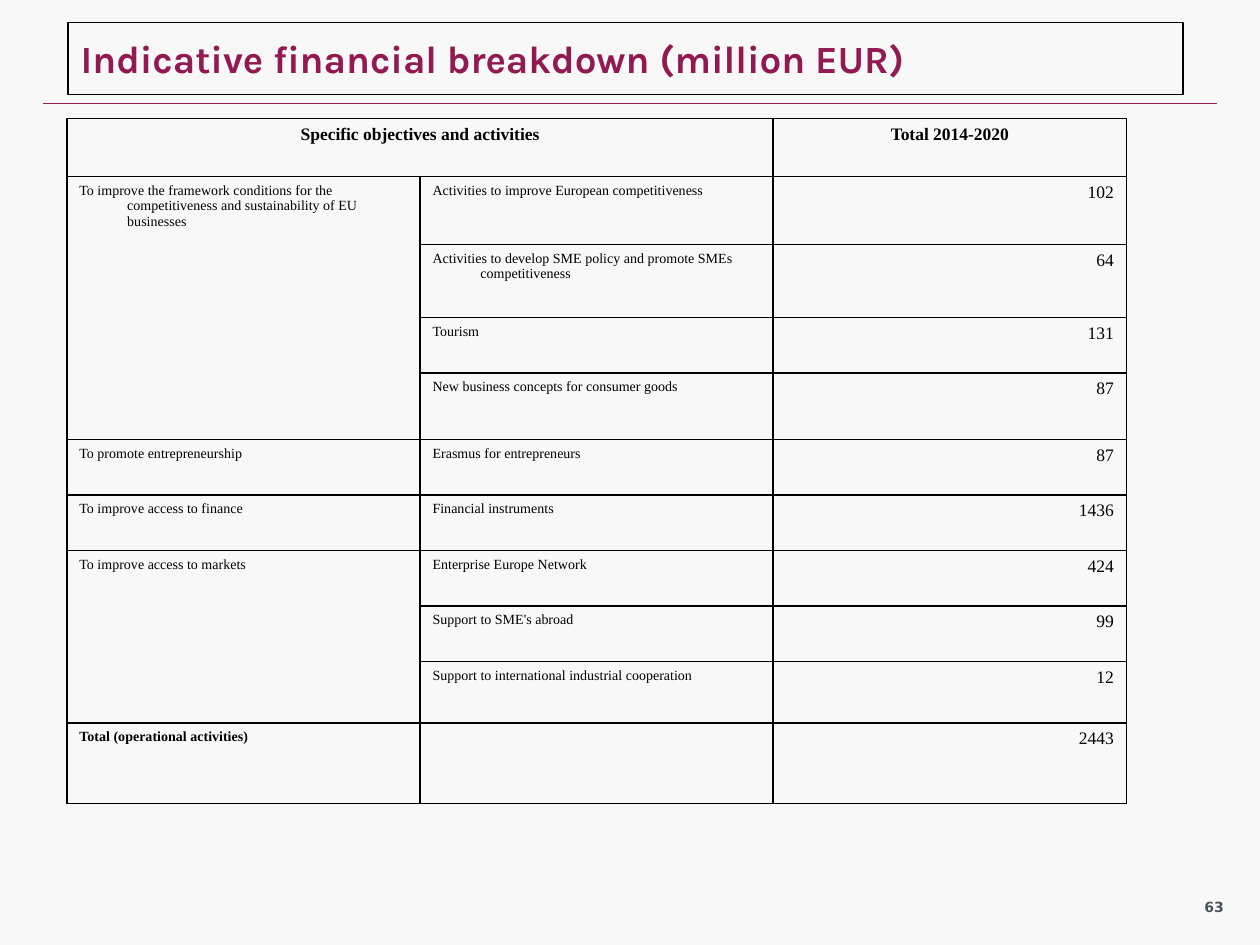
from lxml.etree import SubElement
from pptx import Presentation
from pptx.dml.color import RGBColor
from pptx.enum.shapes import MSO_CONNECTOR
from pptx.enum.text import MSO_ANCHOR, PP_ALIGN
from pptx.oxml.ns import qn
from pptx.util import Inches, Pt

WIDTH, HEIGHT = 10, 7.5
BLACK, PLUM, SLATE, PAPER = "000000", "921A50", "49545A", "F8F8F8"
HANGING = 0.38
ROW_HEIGHTS = [0.46, 0.54, 0.58, 0.44, 0.53, 0.44, 0.44, 0.44, 0.44, 0.49, 0.64]
OBJECTIVES = [
    ("To improve the framework conditions for the competitiveness and sustainability of EU businesses", [
        ("Activities to improve European competitiveness", 102),
        ("Activities to develop SME policy and promote SMEs competitiveness", 64),
        ("Tourism", 131),
        ("New business concepts for consumer goods", 87),
    ]),
    ("To promote entrepreneurship", [("Erasmus for entrepreneurs", 87)]),
    ("To improve access to finance", [("Financial instruments", 1436)]),
    ("To improve access to markets", [
        ("Enterprise Europe Network", 424),
        ("Support to SME's abroad", 99),
        ("Support to international industrial cooperation", 12),
    ]),
]


def color(value):
    return RGBColor.from_string(value)


def write(frame, text, size=8, font="Times New Roman", fill=BLACK, bold=False,
          align=PP_ALIGN.LEFT, hanging=0):
    para = frame.paragraphs[0]
    para.alignment = align
    if hanging:
        properties = para._p.get_or_add_pPr()
        properties.set("marL", str(Inches(hanging)))
        properties.set("indent", str(-Inches(hanging)))
    span = para.add_run()
    span.text = text
    span.font.size = Pt(size)
    span.font.name = font
    span.font.bold = bold
    span.font.color.rgb = color(fill)


def add_borders(cell, width=1):
    properties = cell._tc.get_or_add_tcPr()
    for side in ("a:lnL", "a:lnR", "a:lnT", "a:lnB"):
        line = SubElement(properties, qn(side), w=str(Pt(width)))
        solid = SubElement(line, qn("a:solidFill"))
        SubElement(solid, qn("a:srgbClr"), val=BLACK)


def add_title(page, left, top, width, height):
    title = page.shapes.title
    title.left, title.top, title.width, title.height = map(Inches, (left, top, width, height))
    title.line.color.rgb = color(BLACK)
    title.line.width = Pt(0.75)
    title.text_frame.word_wrap = True
    title.text_frame.vertical_anchor = MSO_ANCHOR.MIDDLE
    write(title.text_frame, "Indicative financial breakdown (million EUR)",
          size=22, font="Karla", fill=PLUM, bold=True)


def add_rule(page, left, top, width):
    rule = page.shapes.add_connector(MSO_CONNECTOR.STRAIGHT, Inches(left), Inches(top),
                                     Inches(left + width), Inches(top))
    rule.line.color.rgb = color(PLUM)
    rule.line.width = Pt(0.5)
    SubElement(rule._element.spPr, qn("a:effectLst"))


def add_breakdown(page, left, top, width):
    table = page.shapes.add_table(len(ROW_HEIGHTS), 3, Inches(left), Inches(top),
                                  Inches(width), Inches(sum(ROW_HEIGHTS))).table
    for column in table.columns:
        column.width = Inches(width / 3)
    for row, height in zip(table.rows, ROW_HEIGHTS):
        row.height = Inches(height)
    for cell in table.iter_cells():
        add_borders(cell)
        cell.fill.background()

    def put(row, column, text, **style):
        write(table.cell(row, column).text_frame, text, hanging=HANGING, **style)

    heading = {"size": 10, "bold": True, "align": PP_ALIGN.CENTER}
    amount = {"size": 10, "align": PP_ALIGN.RIGHT}
    table.cell(0, 0).merge(table.cell(0, 1))
    put(0, 0, "Specific objectives and activities", **heading)
    put(0, 2, "Total 2014-2020", **heading)
    row = 1
    for objective, activities in OBJECTIVES:
        if len(activities) > 1:
            table.cell(row, 0).merge(table.cell(row + len(activities) - 1, 0))
        put(row, 0, objective)
        for activity, total in activities:
            put(row, 1, activity)
            put(row, 2, str(total), **amount)
            row += 1
    put(row, 0, "Total (operational activities)", bold=True)
    put(row, 2, str(sum(total for _, group in OBJECTIVES for _, total in group) + 1), **amount)


def add_page_number(page, left, top, width, height):
    box = page.shapes.add_textbox(*map(Inches, (left, top, width, height)))
    box.text_frame.word_wrap = True
    write(box.text_frame, "63", font="DejaVu Sans", fill=SLATE, bold=True)


def main():
    deck = Presentation()
    deck.slide_width, deck.slide_height = Inches(WIDTH), Inches(HEIGHT)
    page = deck.slides.add_slide(deck.slide_layouts[5])
    page.background.fill.solid()
    page.background.fill.fore_color.rgb = color(PAPER)
    margin = 0.034 * WIDTH
    add_rule(page, margin, 0.11 * HEIGHT, WIDTH - 2 * margin)
    add_title(page, 0.54, 0.18, 8.85, 0.57)
    add_breakdown(page, 0.53, 0.94, 8.41)
    add_page_number(page, 9.46, 7.08, 0.45, 0.33)
    deck.save("out.pptx")


if __name__ == "__main__":
    main()
